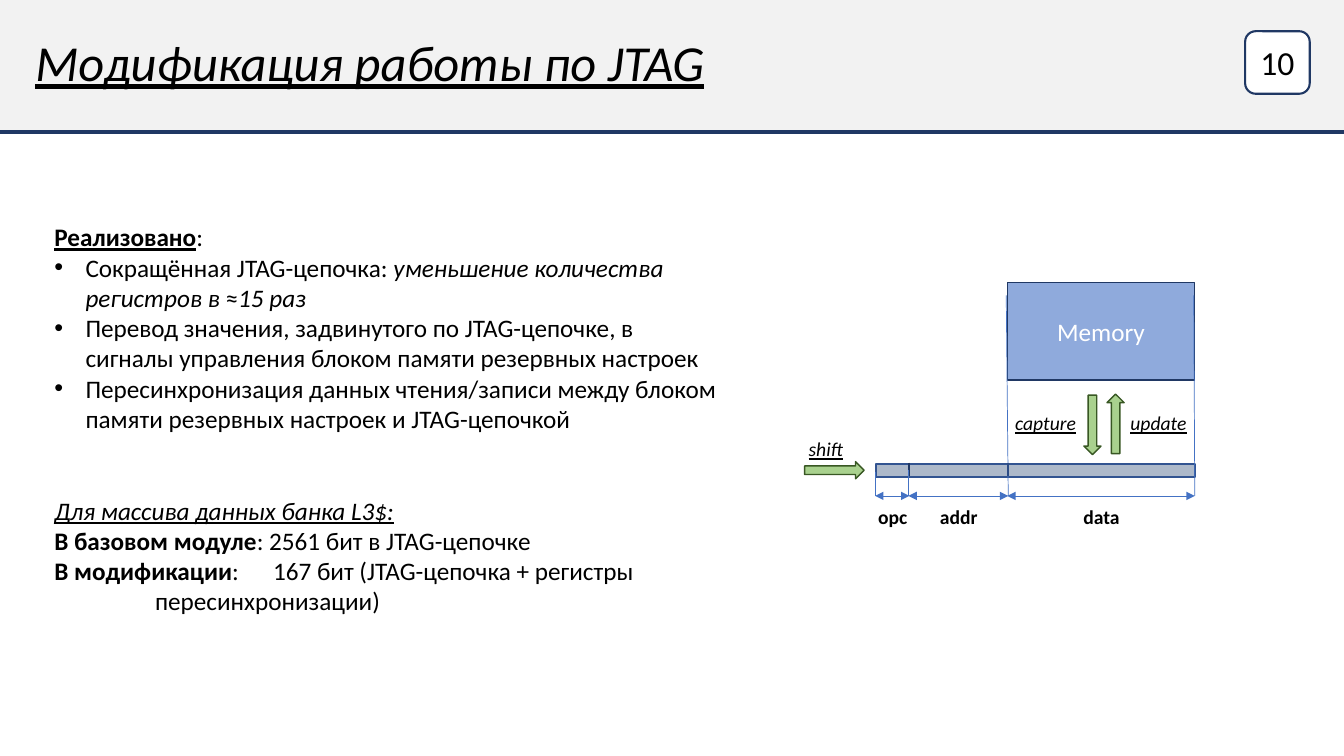
from pptx import Presentation
from pptx.util import Inches, Pt
from pptx.dml.color import RGBColor
from pptx.enum import shapes, text
from pptx.oxml import ns
from lxml import etree

NAVY = RGBColor(0x20, 0x38, 0x64)
BLUE = RGBColor(0x44, 0x72, 0xC4)
SKY = RGBColor(0x8F, 0xAA, 0xDC)
STEEL = RGBColor(0xAD, 0xB9, 0xCA)
EDGE = RGBColor(0x32, 0x54, 0x91)
LEAF = RGBColor(0xA9, 0xD1, 0x8E)
MOSS = RGBColor(0x38, 0x57, 0x23)
PALE = RGBColor(0xF2, 0xF2, 0xF2)
WHITE = RGBColor(255, 255, 255)
BLACK = RGBColor(0, 0, 0)
FONT = "Calibri"
KIND = shapes.MSO_SHAPE

TITLE = "Модификация работы по JTAG"
BODY = [
    ("head", [("Реализовано", "bu"), (":", "")]),
    ("item", [("Сокращённая JTAG-цепочка: ", ""),
              ("уменьшение количества регистров в ", "i"), ("≈", ""), ("15 раз", "i")]),
    ("item", [("Перевод значения, задвинутого по JTAG-цепочке, "
               "в сигналы управления блоком памяти резервных настроек", "")]),
    ("item", [("Пересинхронизация данных чтения/записи между "
               "блоком памяти резервных настроек и JTAG-цепочкой", "")]),
    ("gap", [("Для массива данных банка L3$:", "iu")]),
    ("line", [("В базовом модуле", "b"), (": 2561 бит в JTAG-цепочке", "")]),
    ("tab", [("В модификации", "b"), (":\t167 бит (JTAG-цепочка + регистры", "")]),
    ("rest", [("пересинхронизации)", "")]),
]
FIELDS = [("opс", 8.69, 9.02), ("addr", 9.02, 10), ("data", 10, 11.85)]
ACTS = [("capture", 10.37, 4.03), ("update", 11.49, 4.03), ("shift", 8.19, 4.29)]
ARROWS = [(KIND.DOWN_ARROW, 10.75, 3.92, 0.17, 0.59),
          (KIND.RIGHT_ARROW, 7.98, 4.58, 0.59, 0.17),
          (KIND.UP_ARROW, 10.98, 3.91, 0.17, 0.59)]
GUIDES = [(8.68, 4.68, 8.68, 4.92), (9.01, 4.66, 9.01, 4.92),
          (9.98, 2.93, 10, 4.92), (11.84, 2.93, 11.85, 4.92)]

deck = Presentation()
deck.slide_width, deck.slide_height = Inches(13.33), Inches(7.5)
slide = deck.slides.add_slide(deck.slide_layouts[5])
parts = slide.shapes


def style(para, size, color=BLACK, marks=""):
    font = para.font
    font.name, font.size, font.color.rgb = FONT, Pt(size), color
    for key, name in (("b", "bold"), ("i", "italic"), ("u", "underline")):
        if key in marks:
            setattr(font, name, True)


def block(kind, x, y, w, h, fill, edge, width, words="", size=18, color=BLACK):
    box = parts.add_shape(kind, *map(Inches, (x, y, w, h)))
    box.shadow.inherit = False
    box.fill.solid()
    box.fill.fore_color.rgb = fill
    box.line.color.rgb, box.line.width = edge, Pt(width)
    if words:
        frame = box.text_frame
        frame.text = words
        frame.word_wrap = False
        frame.vertical_anchor = text.MSO_ANCHOR.MIDDLE
        frame.paragraphs[0].alignment = text.PP_ALIGN.CENTER
        style(frame.paragraphs[0], size, color)
    return box


def link(x1, y1, x2, y2, color=BLUE, width=0.5, heads=False):
    line = parts.add_connector(shapes.MSO_CONNECTOR.STRAIGHT,
                               *map(Inches, (x1, y1, x2, y2)))
    line.line.color.rgb, line.line.width = color, Pt(width)
    if heads:
        for tag in ("a:headEnd", "a:tailEnd"):
            etree.SubElement(line.line._get_or_add_ln(), ns.qn(tag), type="triangle")
    etree.SubElement(line._element.spPr, ns.qn("a:effectLst"))


def label(words, mid, y, marks):
    box = parts.add_textbox(*map(Inches, (mid - 0.5, y, 1, 0.34)))
    frame = box.text_frame
    frame.text = words
    frame.word_wrap = True
    frame.paragraphs[0].alignment = text.PP_ALIGN.CENTER
    style(frame.paragraphs[0], 14, BLACK, marks)


def indent(para, left, first=0):
    props = para._p.get_or_add_pPr()
    props.set("marL", str(Inches(left)))
    props.set("indent", str(Inches(first)))
    return props


def write(para, kind, runs):
    style(para, 18)
    for words, marks in runs:
        run = para.add_run()
        run.text = words
        for key, name in (("b", "bold"), ("i", "italic"), ("u", "underline")):
            if key in marks:
                setattr(run.font, name, True)
    if kind == "gap":
        para.space_before = Pt(44)
    elif kind == "rest":
        indent(para, 1)
    elif kind == "item":
        props = indent(para, 0.31, -0.31)
        mark = etree.Element(ns.qn("a:buChar"), char="•")
        face = etree.Element(ns.qn("a:buFont"), typeface="Arial")
        props.insert(0, mark)
        props.insert(0, face)
    elif kind == "tab":
        stops = etree.Element(ns.qn("a:tabLst"))
        etree.SubElement(stops, ns.qn("a:tab"), pos=str(Inches(2.17)), algn="l")
        para._p.get_or_add_pPr().insert(0, stops)


band = block(KIND.RECTANGLE, -0.08, -0.08, 13.54, 1.39, PALE, NAVY, 3)
parts._spTree.insert(2, band._element)
title = parts.title
title.left, title.top, title.width, title.height = map(Inches, (0.25, 0.26, 11.52, 0.71))
frame = title.text_frame
frame.text = TITLE
frame.auto_size = text.MSO_AUTO_SIZE.NONE
frame.vertical_anchor = text.MSO_ANCHOR.TOP
frame.paragraphs[0].alignment = text.PP_ALIGN.LEFT
style(frame.paragraphs[0], 36, BLACK, "iu")
block(KIND.ROUNDED_RECTANGLE, 12.35, 0.31, 0.64, 0.62, WHITE, NAVY, 1.5, "10", 24)

frame = parts.add_textbox(*map(Inches, (0.44, 2.15, 6.8, 4.04))).text_frame
frame.word_wrap = True
for n, (kind, runs) in enumerate(BODY):
    write(frame.add_paragraph() if n else frame.paragraphs[0], kind, runs)

block(KIND.RECTANGLE, 9.99, 2.8, 1.86, 0.97, SKY, NAVY, 1, "Memory", 18, WHITE)
block(KIND.RECTANGLE, 8.69, 4.6, 3.16, 0.13, STEEL, EDGE, 1.5)
for name, start, end in FIELDS:
    if start > FIELDS[0][1]:
        link(start, 4.59, start, 4.72, NAVY, 1.5)
    link(start - 0.01, 4.92, end, 4.92, heads=True)
    label(name, (start + end) / 2, 4.96, "b")
for ends in GUIDES:
    link(*ends)
for name, mid, y in ACTS:
    label(name, mid, y, "iu")
for arrow in ARROWS:
    block(*arrow, LEAF, MOSS, 1)

deck.save("out.pptx")
